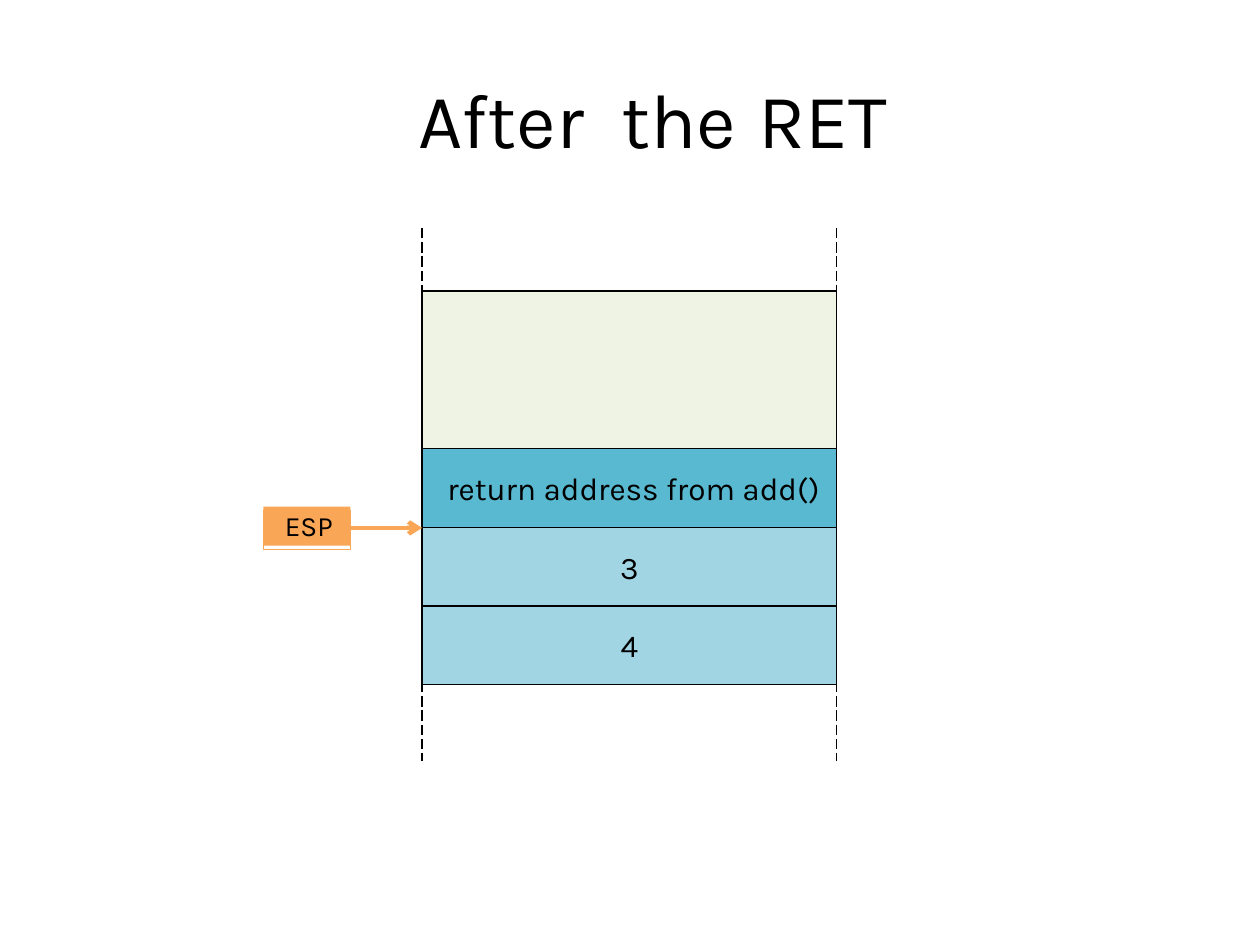
from lxml import etree
from pptx import Presentation
from pptx.dml.color import RGBColor
from pptx.enum.dml import MSO_LINE
from pptx.enum.shapes import MSO_CONNECTOR, MSO_SHAPE
from pptx.enum.text import MSO_ANCHOR, PP_ALIGN
from pptx.oxml.ns import qn
from pptx.util import Inches, Pt

BLACK = RGBColor(0x00, 0x00, 0x00)
FREE_SPACE = RGBColor(0xEE, 0xF3, 0xE4)
RETURN_ADDRESS = RGBColor(0x59, 0xB9, 0xD0)
ARGUMENT = RGBColor(0xA2, 0xD5, 0xE3)
ORANGE = RGBColor(0xFA, 0xA6, 0x57)

STACK_LEFT, STACK_WIDTH = 3.35, 3.29
CELL_HEIGHT = 0.625

deck = Presentation()
deck.slide_width, deck.slide_height = Inches(10), Inches(7.5)
page = deck.slides.add_slide(deck.slide_layouts[6])


def add_line(x1, y1, x2, y2, color, width):
    line = page.shapes.add_connector(
        MSO_CONNECTOR.STRAIGHT, Inches(x1), Inches(y1), Inches(x2), Inches(y2))
    line.line.color.rgb = color
    line.line.width = Pt(width)
    etree.SubElement(line._element.spPr, qn("a:effectLst"))
    return line


def set_text(box, text, size, align=PP_ALIGN.LEFT, indent=0):
    """Write one paragraph in a frame whose only margin is the left indent."""
    frame = box.text_frame
    frame.word_wrap = True
    frame.margin_left = Inches(indent)
    frame.margin_top = frame.margin_right = frame.margin_bottom = 0
    paragraph = frame.paragraphs[0]
    paragraph.text = text
    paragraph.alignment = align
    paragraph.font.name = "Karla"
    paragraph.font.size = Pt(size)
    paragraph.font.color.rgb = BLACK
    return paragraph


# Title, one box per word
for word, left, width in [("After", 3.31, 1.92), ("the", 4.92, 1.03), ("RET", 6.01, 1.16)]:
    box = page.shapes.add_textbox(Inches(left), Inches(0.66), Inches(width), Inches(0.64))
    paragraph = set_text(box, word, 44, indent=0.01)
    paragraph.line_spacing = Pt(46)
    paragraph.space_before = Pt(2.3)

# Dashed sides of the stack
for x in (STACK_LEFT, STACK_LEFT + STACK_WIDTH):
    side = add_line(x, 1.81, x, 6.04, BLACK, 0.75)
    side.line.dash_style = MSO_LINE.LONG_DASH

# Stack cells from top to bottom
cells = [
    ("", 2, FREE_SPACE, PP_ALIGN.CENTER, 0),
    ("return address from add()", 1, RETURN_ADDRESS, PP_ALIGN.LEFT, 0.2),
    ("3", 1, ARGUMENT, PP_ALIGN.CENTER, 0),
    ("4", 1, ARGUMENT, PP_ALIGN.CENTER, 0),
]
top = 2.31
for text, units, color, align, indent in cells:
    height = units * CELL_HEIGHT
    cell = page.shapes.add_shape(
        MSO_SHAPE.RECTANGLE, Inches(STACK_LEFT), Inches(top), Inches(STACK_WIDTH), Inches(height))
    cell.shadow.inherit = False
    cell.fill.solid()
    cell.fill.fore_color.rgb = color
    cell.line.color.rgb = BLACK
    cell.line.width = Pt(0.75)
    if text:
        set_text(cell, text, 18, align, indent)
        cell.text_frame.vertical_anchor = MSO_ANCHOR.MIDDLE
    top += height

# Stack pointer label: a filled plate with a slightly lower outline
plate, outline = [
    page.shapes.add_shape(
        MSO_SHAPE.RECTANGLE, Inches(2.09), Inches(y), Inches(0.69), Inches(0.31))
    for y in (4.02, 4.05)
]
plate.shadow.inherit = outline.shadow.inherit = False
plate.fill.solid()
plate.fill.fore_color.rgb = ORANGE
plate.line.fill.background()
outline.fill.background()
outline.line.color.rgb = ORANGE
outline.line.width = Pt(0.75)
label = set_text(outline, "ESP", 16, indent=0.17)
label.line_spacing = 0.97
label.space_before = Pt(2)
outline.text_frame.vertical_anchor = MSO_ANCHOR.TOP

# Stack pointer arrow
arrow = add_line(2.78, 4.19, STACK_LEFT, 4.19, ORANGE, 2.5)
etree.SubElement(arrow.line._get_or_add_ln(), qn("a:tailEnd"), type="arrow")

deck.save("out.pptx")
